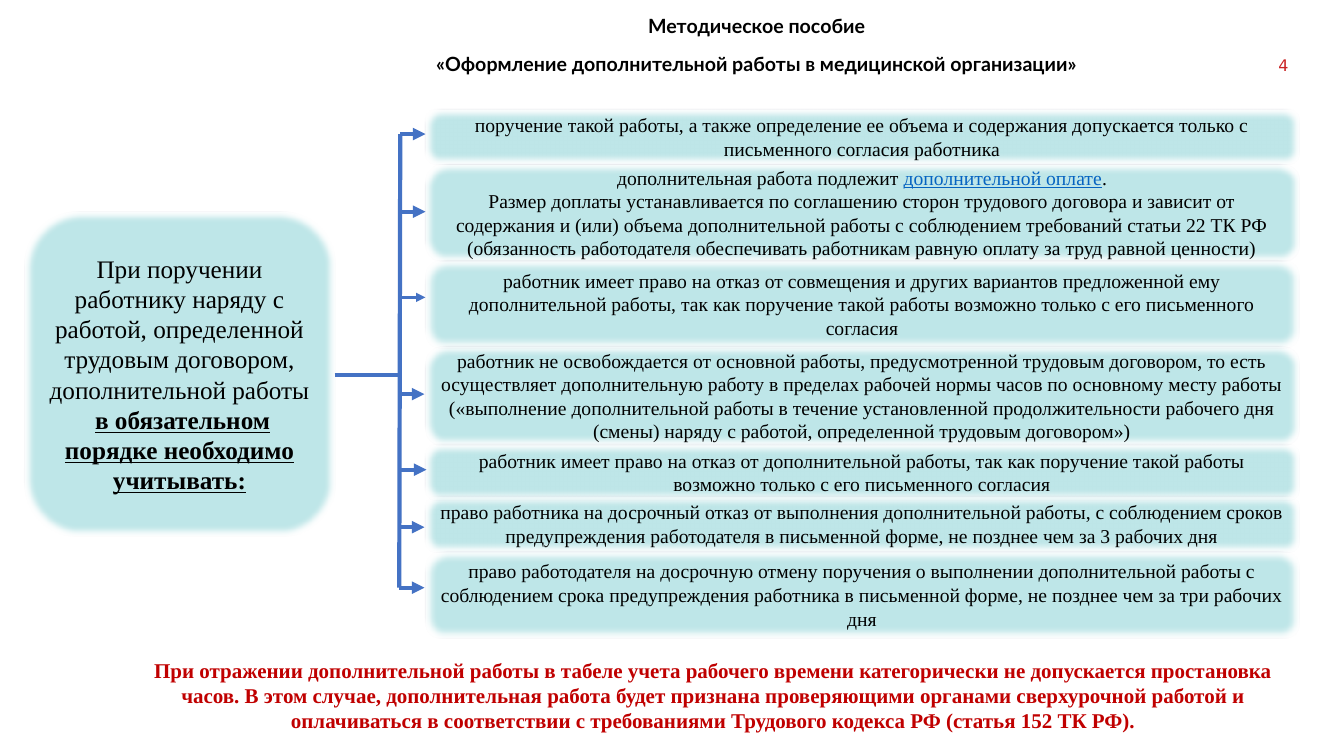
from dataclasses import dataclass, field

from lxml.etree import SubElement
from pptx import Presentation
from pptx.dml.color import RGBColor
from pptx.enum.shapes import MSO_CONNECTOR as CONN, MSO_SHAPE as SHAPE
from pptx.enum.text import MSO_ANCHOR as ANCHOR, MSO_AUTO_SIZE as FIT, PP_ALIGN as ALIGN
from pptx.oxml.ns import qn
from pptx.util import Inches, Pt

COLORS = {
    "text": "000000", "panel": "BEE6E8", "outline": "1E3256", "arrow": "4472C4",
    "link": "0563C1", "warning": "C00000", "number": "CA2324",
}
SERIF = "Times New Roman"
SOFT_EDGE = Pt(5)
RULE_LEFT, RULE_WIDTH = 4.22, 8.66
ARROW_LENGTH = 0.25


def rgb(name: str) -> RGBColor:
    return RGBColor.from_string(COLORS[name])


@dataclass
class Run:
    text: str
    color: str = "text"
    format: dict = field(default_factory=dict)


@dataclass
class Rule:
    top: float
    height: float
    arrow_x: float
    arrow_y: float
    paragraphs: list[list[Run]]
    arrow_weight: float = 3


RULES = [
    Rule(1.08, 0.55, 3.97, 1.33, [[Run(
        "поручение такой работы, а также определение ее объема и содержания "
        "допускается только с письменного согласия работника")]]),
    Rule(1.63, 0.96, 3.97, 2.1, [
        [Run("дополнительная работа подлежит "),
         Run("дополнительной оплате", "link", {"underline": True}),
         Run(".")],
        [Run("Размер доплаты устанавливается по соглашению сторон трудового договора "
             "и зависит от содержания и (или) объема дополнительной работы с соблюдением "
             "требований статьи 22 ТК РФ (обязанность работодателя обеспечивать "
             "работникам равную оплату за труд равной ценности)")]]),
    Rule(2.58, 0.87, 3.97, 2.95, [[Run(
        "работник имеет право на отказ от совмещения и других вариантов предложенной "
        "ему дополнительной работы, так как поручение такой работы возможно только "
        "с его письменного согласия")]], 2.25),
    Rule(3.44, 0.97, 3.96, 3.91, [[Run(
        "работник не освобождается от основной работы, предусмотренной трудовым "
        "договором, то есть осуществляет дополнительную работу в пределах рабочей нормы "
        "часов по основному месту работы («выполнение дополнительной работы в течение "
        "установленной продолжительности рабочего дня (смены) наряду с работой, "
        "определенной трудовым договором»)")]]),
    Rule(4.41, 0.55, 3.98, 4.66, [[Run(
        "работник имеет право на отказ от дополнительной работы, так как поручение "
        "такой работы возможно только с его письменного согласия")]]),
    Rule(4.92, 0.55, 3.96, 5.23, [[Run(
        "право работника на досрочный отказ от выполнения дополнительной работы, "
        "с соблюдением сроков предупреждения работодателя в письменной форме, "
        "не позднее чем за 3 рабочих дня")]]),
    Rule(5.47, 0.86, 3.96, 5.83, [[Run(
        "право работодателя на досрочную отмену поручения о выполнении дополнительной "
        "работы с соблюдением срока предупреждения работника в письменной форме, "
        "не позднее чем за три рабочих дня")]]),
]

CONDITION = [
    [Run("При поручении работнику наряду с работой, определенной трудовым договором, "
         "дополнительной работы")],
    [Run(" "),
     Run("в обязательном порядке необходимо учитывать:",
         format={"bold": True, "underline": True})],
]

TITLE = ["Методическое пособие", "«Оформление дополнительной работы в медицинской организации»"]

WARNING = (
    "При отражении дополнительной работы в табеле учета рабочего времени категорически "
    "не допускается простановка часов. В этом случае, дополнительная работа будет признана "
    "проверяющими органами сверхурочной работой и оплачиваться в соответствии "
    "с требованиями Трудового кодекса РФ (статья 152 ТК РФ).")


def write(tf, paragraphs: list[list[Run]], size: float, font: str = SERIF,
          align=ALIGN.CENTER, anchor=ANCHOR.TOP, after: float = 0) -> None:
    frame_format = {"word_wrap": True, "auto_size": FIT.NONE, "vertical_anchor": anchor}
    for name, value in frame_format.items():
        setattr(tf, name, value)
    for i, runs in enumerate(paragraphs):
        p = tf.paragraphs[0] if i == 0 else tf.add_paragraph()
        p.alignment, p.space_after = align, Pt(after)
        for run in runs:
            r = p.add_run()
            r.text = run.text
            for name, value in {"name": font, "size": Pt(size), **run.format}.items():
                setattr(r.font, name, value)
            r.font.color.rgb = rgb(run.color)


def add_panel(shapes, left: float, top: float, width: float, height: float,
              paragraphs: list[list[Run]], size: float) -> None:
    sp = shapes.add_shape(SHAPE.ROUNDED_RECTANGLE, *map(Inches, (left, top, width, height)))
    sp.fill.solid()
    sp.fill.fore_color.rgb = rgb("panel")
    sp.line.color.rgb = rgb("outline")
    sp.line.width = Pt(1)
    sp.shadow.inherit = False
    effects = sp._element.spPr.find(qn("a:effectLst"))
    SubElement(effects, qn("a:softEdge"), rad=str(SOFT_EDGE))
    write(sp.text_frame, paragraphs, size, anchor=ANCHOR.MIDDLE)


def add_line(shapes, x1: float, y1: float, x2: float, y2: float,
             weight: float = 3, arrow: bool = False) -> None:
    line = shapes.add_connector(CONN.STRAIGHT, *map(Inches, (x1, y1, x2, y2)))
    line.line.color.rgb = rgb("arrow")
    line.line.width = Pt(weight)
    if arrow:
        SubElement(line.line._get_or_add_ln(), qn("a:tailEnd"), type="triangle")
    SubElement(line._element.spPr, qn("a:effectLst"))


def main() -> None:
    prs = Presentation()
    prs.slide_width, prs.slide_height = Inches(13.33), Inches(7.5)
    s = prs.slides.add_slide(prs.slide_layouts[5])
    shapes = s.shapes

    # Title and slide number
    title = shapes.title
    title.left, title.top, title.width, title.height = map(Inches, (3.09, 0.09, 8.83, 0.71))
    write(title.text_frame, [[Run(line, format={"bold": True})] for line in TITLE],
          14, "Lato", after=10)
    tf = shapes.add_textbox(*map(Inches, (12.47, 0.55, 0.31, 0.24))).text_frame
    for side in ("left", "top", "right", "bottom"):
        setattr(tf, f"margin_{side}", 0)
    write(tf, [[Run("4", "number")]], 11.4, "DejaVu Sans", ALIGN.RIGHT)

    # Condition on the left, rules on the right
    add_panel(shapes, 0.24, 2.1, 3.08, 3.22, CONDITION, 18)
    for rule in RULES:
        add_panel(shapes, RULE_LEFT, rule.top, RULE_WIDTH, rule.height, rule.paragraphs, 14)

    # Bracket: arrows, trunk and stem
    for rule in RULES:
        add_line(shapes, rule.arrow_x, rule.arrow_y, rule.arrow_x + ARROW_LENGTH,
                 rule.arrow_y, rule.arrow_weight, arrow=True)
    first, last = RULES[0], RULES[-1]
    add_line(shapes, first.arrow_x, first.arrow_y, last.arrow_x, last.arrow_y)
    add_line(shapes, 3.32, 3.72, 3.98, 3.72)

    # Warning at the bottom
    tf = shapes.add_textbox(*map(Inches, (1.12, 6.47, 11.91, 0.86))).text_frame
    write(tf, [[Run(WARNING, "warning", {"bold": True})]], 15)

    prs.save("out.pptx")


if __name__ == "__main__":
    main()
